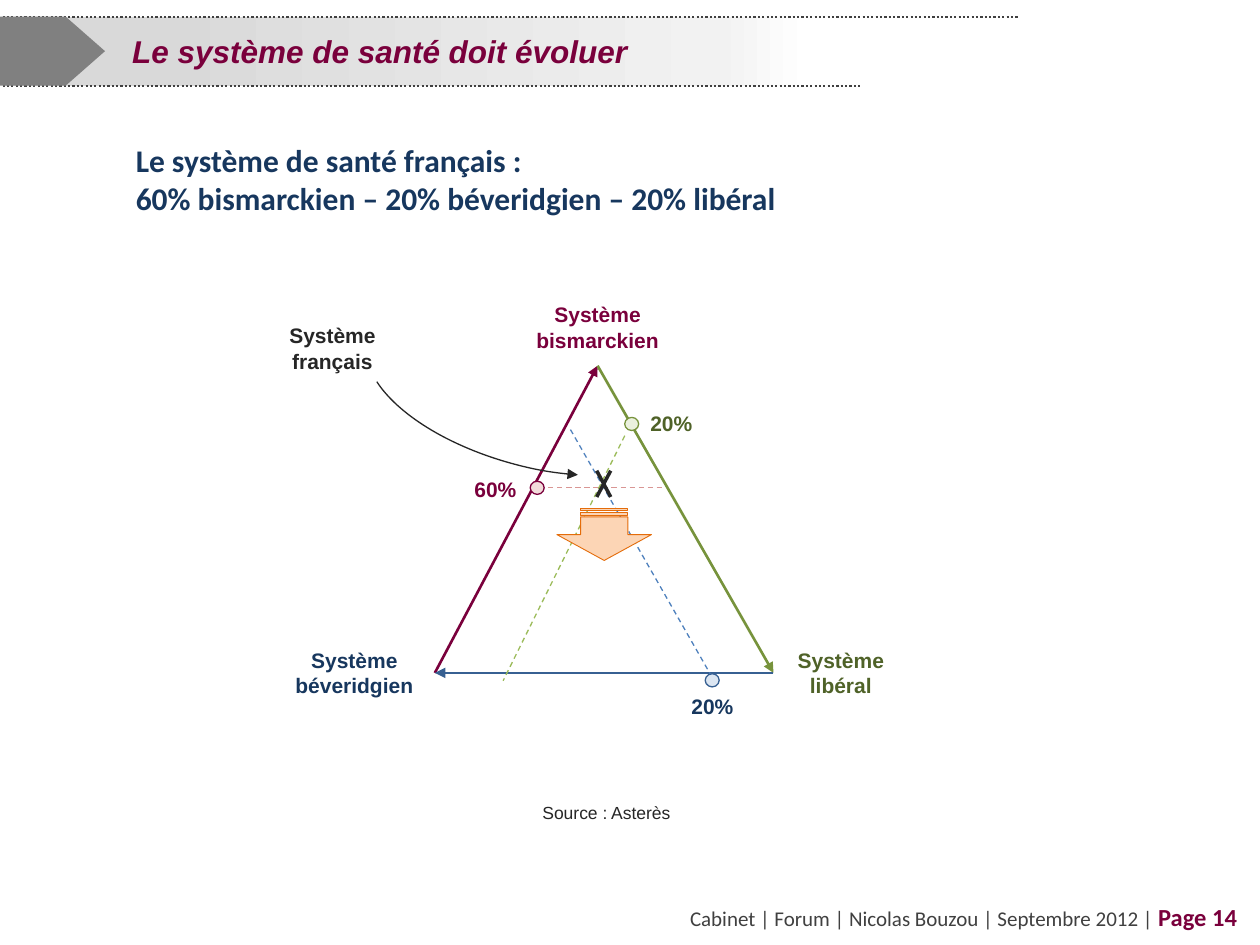
from dataclasses import dataclass
from typing import Optional

from lxml import etree
from pptx import Presentation
from pptx import util as u
from pptx.dml.color import RGBColor
from pptx.enum import dml, shapes, text
from pptx.oxml import ns

Pt = u.Pt
Point = tuple[float, float]
Box = tuple[float, float, float, float]

WINE = RGBColor(0x7A, 0x00, 0x3C)
NAVY = RGBColor(0x17, 0x37, 0x5E)
BLUE = RGBColor(0x37, 0x60, 0x92)
LIGHT_BLUE = RGBColor(0x4F, 0x81, 0xBD)
PALE_BLUE = RGBColor(0xDC, 0xE6, 0xF2)
FOREST = RGBColor(0x4F, 0x62, 0x28)
GREEN = RGBColor(0x77, 0x93, 0x3C)
LIGHT_GREEN = RGBColor(0x9B, 0xBB, 0x59)
PALE_GREEN = RGBColor(0xEB, 0xF1, 0xDE)
ROSE = RGBColor(0xD9, 0x96, 0x94)
PALE_ROSE = RGBColor(0xF2, 0xDC, 0xDB)
PEACH = RGBColor(0xFC, 0xD5, 0xB5)
ORANGE = RGBColor(0xE4, 0x6C, 0x0A)
GRAY = RGBColor(0x80, 0x80, 0x80)
DARK_GRAY = RGBColor(0x40, 0x40, 0x40)
INK = RGBColor(0x26, 0x26, 0x26)
BANNER_STOPS = ((14, "D9D9D9"), (62, "F2F2F2"), (70, "FFFFFF"))

LEFT, CENTER, RIGHT = text.PP_ALIGN.LEFT, text.PP_ALIGN.CENTER, text.PP_ALIGN.RIGHT
DOTS, DASHES = dml.MSO_LINE.ROUND_DOT, dml.MSO_LINE.DASH
SHAPE = shapes.MSO_SHAPE

TOP: Point = (341.5, 209)
BOTTOM_LEFT: Point = (248.5, 384.5)
BOTTOM_RIGHT: Point = (442, 384.5)


@dataclass(frozen=True)
class Label:
    lines: tuple[str, ...]
    box: Box
    color: RGBColor
    align: text.PP_ALIGN = CENTER
    size: float = 12
    font: str = "Arial"
    bold: bool = True


@dataclass(frozen=True)
class Line:
    start: Point
    end: Point
    color: RGBColor
    width: float
    dash: Optional[dml.MSO_LINE] = None
    arrow: bool = False


@dataclass(frozen=True)
class Marker:
    corner: Point
    fill: RGBColor
    outline: RGBColor


HEADER_RULES = (
    Line((1.5, 9.5), (582.5, 9.5), DARK_GRAY, 1.25, DOTS),
    Line((1.5, 49), (492, 49), DARK_GRAY, 1.25, DOTS),
)
TRIANGLE_LINES = (
    Line(BOTTOM_LEFT, TOP, WINE, 1.5, arrow=True),
    Line(TOP, BOTTOM_RIGHT, GREEN, 1.5, arrow=True),
    Line(BOTTOM_RIGHT, BOTTOM_LEFT, BLUE, 1.5, arrow=True),
    Line((303, 278.5), (380, 278.5), ROSE, 0.75, DASHES),
    Line((326, 245.5), (409.5, 391.5), LIGHT_BLUE, 0.75, DASHES),
    Line((357, 249), (287.5, 389), LIGHT_GREEN, 0.75, DASHES),
)
CROSS_LINES = (
    Line((341, 269), (349, 284), INK, 2),
    Line((341, 284), (349, 269), INK, 2),
)
MARKERS = (
    Marker((303, 275), PALE_ROSE, WINE),
    Marker((357, 238.5), PALE_GREEN, GREEN),
    Marker((403, 385), PALE_BLUE, BLUE),
)
LABELS = (
    Label(("Système", "bismarckien"), (272, 169, 139, 36), WINE),
    Label(("Système", "béveridgien"), (156, 366.5, 93, 36), NAVY),
    Label(("Système", "libéral"), (442, 366.5, 77, 36), FOREST),
    Label(("60%",), (264, 269, 46, 21.5), WINE, LEFT),
    Label(("20%",), (364.5, 231, 46, 21.5), FOREST, LEFT),
    Label(("20%",), (388, 393, 46, 21.5), NAVY, LEFT),
    Label(("Système", "français"), (139, 181, 102, 36), INK),
    Label(("Source : Asterès",), (242, 455, 209, 19.5), INK, size=10, bold=False),
    Label(
        ("Le système de santé français\u00a0:",
         "60% bismarckien\u00a0– 20% béveridgien\u00a0– 20% libéral"),
        (70.5, 77, 430.5, 51), NAVY, LEFT, 18, "Calibri",
    ),
)


def style_font(font, name: str, size: float, color: RGBColor, bold: bool) -> None:
    font.name, font.size, font.bold = name, Pt(size), bold
    font.color.rgb = color


def add_arrowhead(line) -> None:
    outline = line._get_or_add_ln()
    etree.SubElement(outline, ns.qn("a:tailEnd"), type="triangle")


def add_preset(page, kind: SHAPE, box: Box, fill: Optional[RGBColor] = None,
               outline: Optional[RGBColor] = None, width: float = 0.75):
    shape = page.shapes.add_shape(kind, *map(Pt, box))
    shape.shadow.inherit = False
    if fill is None:
        shape.fill.background()
    else:
        shape.fill.solid()
        shape.fill.fore_color.rgb = fill
    if outline is None:
        shape.line.fill.background()
    else:
        shape.line.color.rgb = outline
        shape.line.width = Pt(width)
    return shape


def add_line(page, item: Line) -> None:
    connector = page.shapes.add_connector(
        shapes.MSO_CONNECTOR.STRAIGHT, *map(Pt, item.start + item.end))
    connector.line.color.rgb = item.color
    connector.line.width = Pt(item.width)
    if item.dash is not None:
        connector.line.dash_style = item.dash
    if item.arrow:
        add_arrowhead(connector.line)
    etree.SubElement(connector._element.spPr, ns.qn("a:effectLst"))


def add_label(page, item: Label) -> None:
    frame = page.shapes.add_textbox(*map(Pt, item.box)).text_frame
    frame.word_wrap = True
    frame.text = "\n".join(item.lines)
    for para in frame.paragraphs:
        para.alignment = item.align
        style_font(para.font, item.font, item.size, item.color, item.bold)


def add_banner(page) -> None:
    banner = add_preset(page, SHAPE.RECTANGLE, (1.5, 9.5, 659, 39.5))
    banner.fill.gradient()
    banner.fill.gradient_angle = 0
    stops = banner._element.spPr.find(".//" + ns.qn("a:gsLst"))
    for stop in list(stops):
        stops.remove(stop)
    for percent, color in BANNER_STOPS:
        stop = etree.SubElement(stops, ns.qn("a:gs"), pos=str(percent * 1000))
        etree.SubElement(stop, ns.qn("a:srgbClr"), val=color)

    frame = banner.text_frame
    frame.word_wrap = True
    frame.margin_left = Pt(74)
    frame.vertical_anchor = text.MSO_ANCHOR.MIDDLE
    para = frame.paragraphs[0]
    para.text = "Le système de santé doit évoluer"
    para.alignment = LEFT
    style_font(para.font, "Arial", 18, WINE, True)
    para.font.italic = True


def add_curved_pointer(page) -> None:
    arc = add_preset(page, SHAPE.ARC, (258, 121.5, 93.5, 196.5), outline=INK)
    arc.adjustments[0] = 170.55
    arc.adjustments[1] = 24.95
    arc.rotation = 105.3
    arc._element.spPr.xfrm.set("flipV", "1")
    add_arrowhead(arc.line)


def add_footer(page) -> None:
    frame = page.shapes.add_textbox(*map(Pt, (201.5, 512, 512.5, 28))).text_frame
    frame.word_wrap = True
    para = frame.paragraphs[0]
    para.alignment = RIGHT
    for words, size, color, bold in (
        ("Cabinet | Forum | Nicolas Bouzou | Septembre 2012 | ", 12, DARK_GRAY, False),
        ("Page 14", 14, WINE, True),
    ):
        span = para.add_run()
        span.text = words
        style_font(span.font, "Calibri", size, color, bold)


def main() -> None:
    deck = Presentation()
    deck.slide_width, deck.slide_height = Pt(720), Pt(540)
    page = deck.slides.add_slide(deck.slide_layouts[6])

    add_footer(page)
    add_banner(page)
    for rule in HEADER_RULES:
        add_line(page, rule)
    tab = add_preset(page, SHAPE.PENTAGON, (0, 9.5, 60, 39.5), GRAY)
    tab.adjustments[0] = 0.57

    for line in TRIANGLE_LINES:
        add_line(page, line)
    for marker in MARKERS:
        add_preset(page, SHAPE.OVAL, marker.corner + (8, 7.5), marker.fill, marker.outline)
    for line in CROSS_LINES:
        add_line(page, line)
    add_curved_pointer(page)
    arrow = add_preset(page, SHAPE.STRIPED_RIGHT_ARROW, (330.5, 278.5, 29.5, 54),
                       PEACH, ORANGE, 0.5)
    arrow.width, arrow.height = Pt(29.5), Pt(54)
    arrow.rotation = 90
    for label in LABELS:
        add_label(page, label)

    deck.save("out.pptx")


if __name__ == "__main__":
    main()
